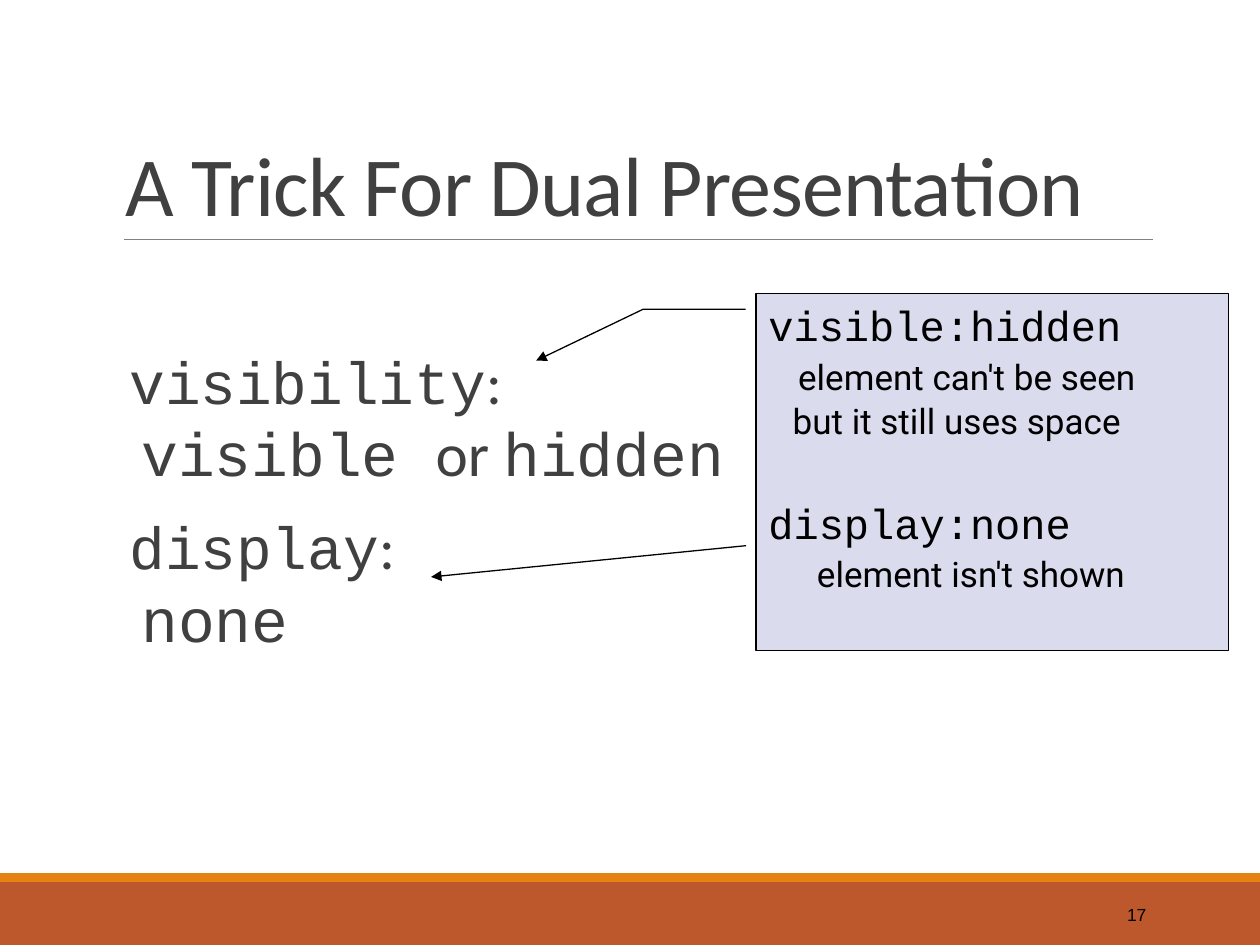
from lxml.etree import SubElement
from pptx import Presentation
from pptx.dml.color import RGBColor
from pptx.enum.shapes import MSO_CONNECTOR, MSO_SHAPE
from pptx.enum.text import MSO_ANCHOR, PP_ALIGN
from pptx.oxml.ns import qn
from pptx.util import Cm, Pt

COLORS = {
    "text": "404040",
    "black": "000000",
    "rule": "808080",
    "band": "BD582C",
    "stripe": "E48312",
    "callout": "DBDBEE",
}
CODE, PROSE, NOTE = "Courier New", "Calibri", "Roboto"


def color(name):
    return RGBColor.from_string(COLORS[name])


def set_attributes(target, values):
    for name, value in values.items():
        setattr(target, name, value)


def fill_text(shape, paragraphs, color_name, frame_format=None):
    """Each paragraph is (runs, paragraph format, left indent in cm);
    each run is (text, font name, size in points)."""
    frame = shape.text_frame
    set_attributes(frame, {"word_wrap": True, **(frame_format or {})})
    for index, (runs, paragraph_format, indent) in enumerate(paragraphs):
        paragraph = frame.paragraphs[0] if index == 0 else frame.add_paragraph()
        set_attributes(paragraph, {"alignment": PP_ALIGN.LEFT, **paragraph_format})
        if indent:
            paragraph._p.get_or_add_pPr().set("marL", str(Cm(indent)))
        for text, font_name, size in runs:
            run = paragraph.add_run()
            run.text = text
            set_attributes(run.font, {"name": font_name, "size": Pt(size)})
            run.font.color.rgb = color(color_name)


def add_text(slide, box, paragraphs, color_name, frame_format=None):
    shape = slide.shapes.add_textbox(*map(Cm, box))
    fill_text(shape, paragraphs, color_name, frame_format)
    return shape


def add_filled_shape(slide, kind, box, fill_name, line_name=None):
    shape = slide.shapes.add_shape(kind, *map(Cm, box))
    shape.shadow.inherit = False
    shape.fill.solid()
    shape.fill.fore_color.rgb = color(fill_name)
    if line_name:
        shape.line.color.rgb = color(line_name)
        shape.line.width = Pt(0.75)
    else:
        shape.line.fill.background()
    return shape


def add_arrowhead(shape, end):
    SubElement(shape.line._get_or_add_ln(), qn(f"a:{end}"), type="triangle")


def add_line(slide, ends, color_name, width):
    line = slide.shapes.add_connector(MSO_CONNECTOR.STRAIGHT, *map(Cm, ends))
    line.line.color.rgb = color(color_name)
    line.line.width = Pt(width)
    SubElement(line._element.spPr, qn("a:effectLst"))
    return line


def add_properties(slide):
    heading = {"line_spacing": 0.9, "space_after": Pt(2)}
    later_heading = {**heading, "space_before": Pt(12)}
    value = {"line_spacing": 0.9, "space_before": Pt(2), "space_after": Pt(4)}
    paragraphs = [
        ([("visibility", CODE, 34), (":", PROSE, 34)], heading, 0.32),
        ([("visible ", CODE, 35), ("or ", PROSE, 35), ("hidden", CODE, 35)], value, 0.56),
        ([("display", CODE, 34), (":", PROSE, 34)], later_heading, 0.32),
        ([("none", CODE, 35)], value, 0.56),
    ]
    no_insets = dict.fromkeys(
        ["margin_left", "margin_right", "margin_top", "margin_bottom"], 0)
    add_text(slide, (2.29, 7.11, 20.96, 9.2), paragraphs, "text", no_insets)


def add_callout(slide):
    callout = add_filled_shape(slide, MSO_SHAPE.LINE_CALLOUT_2,
                               (15.24, 5.92, 9.53, 7.19), "callout", "black")
    for index, value in enumerate([0.044, -0.022, 0.044, -0.239, 0.188, -0.465]):
        callout.adjustments[index] = value
    add_arrowhead(callout, "tailEnd")
    paragraphs = [
        ([("visible:hidden", CODE, 24)], {}, 0),
        ([("element can't be seen", NOTE, 20)], {"space_before": Pt(3)}, 0.6),
        ([("but it still uses space", NOTE, 20)], {"space_before": Pt(1)}, 0.49),
        ([("display:none", CODE, 24)], {"space_before": Pt(32)}, 0),
        ([("element isn't shown", NOTE, 20)], {"space_before": Pt(3)}, 0.98),
    ]
    fill_text(callout, paragraphs, "black", {"vertical_anchor": MSO_ANCHOR.TOP})


def main():
    presentation = Presentation()
    presentation.slide_width, presentation.slide_height = Cm(25.4), Cm(19.05)
    slide = presentation.slides.add_slide(presentation.slide_layouts[6])

    # Footer bands and title rule
    add_filled_shape(slide, MSO_SHAPE.RECTANGLE, (0, 17.78, 25.4, 1.27), "band")
    add_filled_shape(slide, MSO_SHAPE.RECTANGLE, (0, 17.6, 25.4, 0.18), "stripe")
    add_line(slide, (2.49, 4.83, 23.24, 4.83), "rule", 0.5)

    # Title
    title = add_text(slide, (2.29, 0.79, 20.96, 4.04),
                     [([("A Trick For Dual Presentation", PROSE, 48)],
                       {"line_spacing": 0.85}, 0)],
                     "text", {"vertical_anchor": MSO_ANCHOR.BOTTOM})
    title_run = title.text_frame.paragraphs[0].runs[0]
    title_run._r.get_or_add_rPr().set("spc", "-50")

    # Properties and slide number
    add_properties(slide)
    add_text(slide, (20.62, 17.93, 2.74, 1.02),
             [([("17", "Arial", 10)], {"alignment": PP_ALIGN.RIGHT}, 0)],
             "black", {"vertical_anchor": MSO_ANCHOR.MIDDLE})

    # Explanation with its pointers
    add_callout(slide)
    pointer = add_line(slide, (8.69, 11.63, 15.04, 11), "black", 0.75)
    add_arrowhead(pointer, "headEnd")

    presentation.save("out.pptx")


if __name__ == "__main__":
    main()
